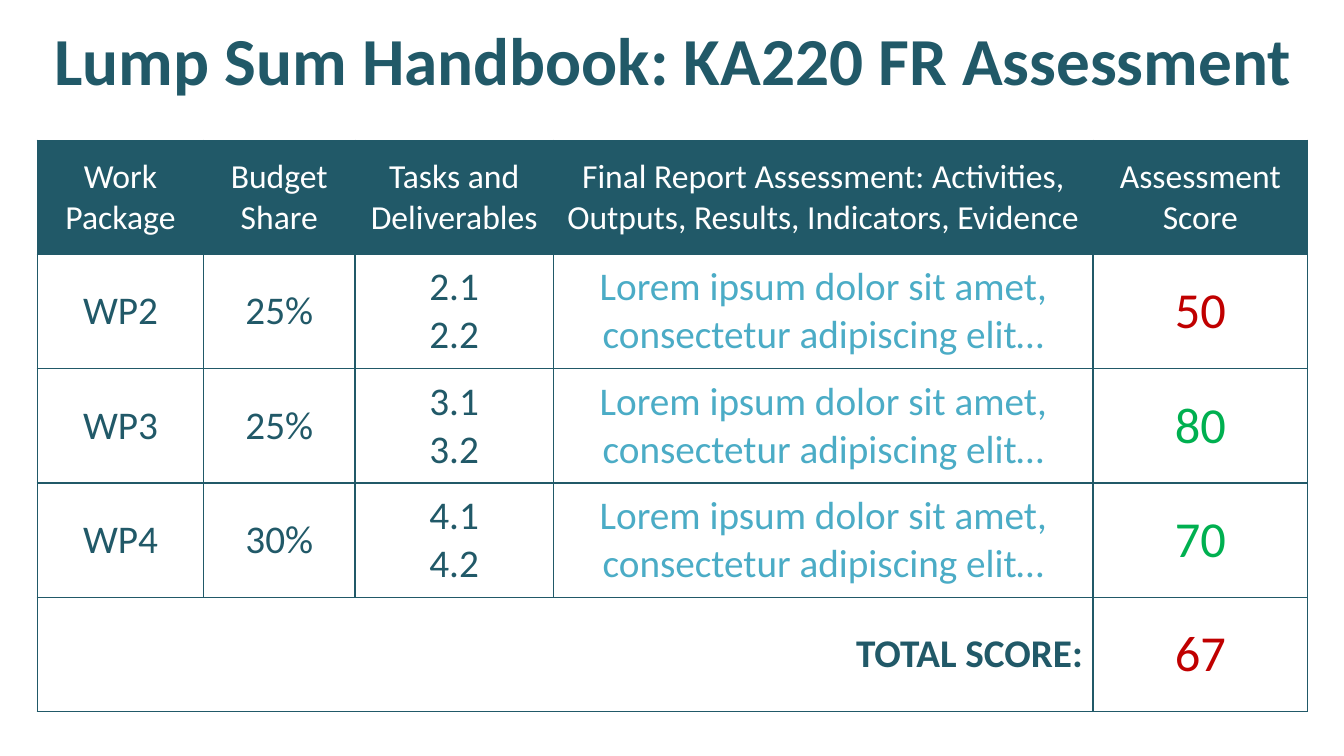
from lxml.etree import SubElement
from pptx import Presentation
from pptx.dml.color import RGBColor
from pptx.enum.text import MSO_ANCHOR as Anchor, MSO_AUTO_SIZE as AutoSize, PP_ALIGN as Align
from pptx.oxml.ns import qn
from pptx.util import Inches, Pt

FONT = "Calibri"
TEAL, AQUA, WHITE = "215968", "4BACC6", "FFFFFF"
RED, GREEN = "C00000", "00B050"
COLUMN_WIDTHS = [1.65, 1.5, 1.97, 5.35, 2.13]
HEADINGS = [
    "Work Package",
    "Budget Share",
    "Tasks and Deliverables",
    "Final Report Assessment: Activities, Outputs, Results, Indicators, Evidence",
    "Assessment Score",
]
FINDINGS = "Lorem ipsum dolor sit amet, consectetur adipiscing elit…"
WORK_PACKAGES = [
    ("WP2", "25%", "2.1\n2.2", FINDINGS, "50"),
    ("WP3", "25%", "3.1\n3.2", FINDINGS, "80"),
    ("WP4", "30%", "4.1\n4.2", FINDINGS, "70"),
]
TOTAL_SCORE = "67"
PASS_SCORE = 70


def color(value):
    """Turn a hex string into a colour."""
    return RGBColor.from_string(value)


def style_text(frame, text, size, hue, bold=False, align=Align.CENTER):
    """Write text into a frame and format its paragraphs."""
    frame.text = text
    for paragraph in frame.paragraphs:
        paragraph.alignment = align
        paragraph.font.name = FONT
        paragraph.font.size = Pt(size)
        paragraph.font.bold = bold
        paragraph.font.color.rgb = color(hue)


def draw_borders(cell):
    """Give a cell thin teal lines on all sides."""
    properties = cell._tc.get_or_add_tcPr()
    for position, side in enumerate(("lnL", "lnR", "lnT", "lnB")):
        line = SubElement(properties, qn(f"a:{side}"), w=str(Pt(1)))
        fill = SubElement(line, qn("a:solidFill"))
        SubElement(fill, qn("a:srgbClr"), val=TEAL)
        properties.insert(position, line)


def fill_score(cell, score):
    """Write a score, green when it passes and red when it does not."""
    style_text(cell.text_frame, score, 36, GREEN if int(score) >= PASS_SCORE else RED)


def add_title(slide, left, top, width, height):
    """Place the slide title in the given box."""
    title = slide.shapes.title
    title.left, title.top = Inches(left), Inches(top)
    title.width, title.height = Inches(width), Inches(height)
    frame = title.text_frame
    frame.auto_size = AutoSize.NONE
    frame.word_wrap = True
    frame.vertical_anchor = Anchor.TOP
    style_text(frame, "Lump Sum Handbook: KA220 FR Assessment", 48, TEAL, bold=True)
    frame.paragraphs[0].line_spacing = 0.8


def add_assessment_table(slide, left, top, width, height):
    """Place the assessment table in the given box."""
    row_count = len(WORK_PACKAGES) + 2
    table = slide.shapes.add_table(
        row_count, len(HEADINGS), Inches(left), Inches(top), Inches(width), Inches(height)
    ).table
    table.horz_banding = False
    for column, share in zip(table.columns, COLUMN_WIDTHS):
        column.width = Inches(width * share / sum(COLUMN_WIDTHS))
    for cell in table.iter_cells():
        cell.vertical_anchor = Anchor.MIDDLE
        cell.fill.background()
        draw_borders(cell)

    for column, heading in enumerate(HEADINGS):
        cell = table.cell(0, column)
        cell.fill.solid()
        cell.fill.fore_color.rgb = color(TEAL)
        style_text(cell.text_frame, heading, 24, WHITE)

    for row, (*details, score) in enumerate(WORK_PACKAGES, start=1):
        for column, detail in enumerate(details):
            hue = AQUA if detail == FINDINGS else TEAL
            style_text(table.cell(row, column).text_frame, detail, 28, hue)
        fill_score(table.cell(row, len(details)), score)

    last_row, last_column = row_count - 1, len(HEADINGS) - 1
    total = table.cell(last_row, 0)
    total.merge(table.cell(last_row, last_column - 1))
    style_text(total.text_frame, "TOTAL SCORE:", 28, TEAL, bold=True, align=Align.RIGHT)
    fill_score(table.cell(last_row, last_column), TOTAL_SCORE)


def main():
    """Build and save the presentation."""
    presentation = Presentation()
    presentation.slide_width, presentation.slide_height = Inches(13.33), Inches(7.5)
    slide = presentation.slides.add_slide(presentation.slide_layouts.get_by_name("Title Only"))
    add_title(slide, 0.03, 0.29, 13.3, 0.76)
    add_assessment_table(slide, 0.37, 1.39, 12.6, 5.67)
    presentation.save("out.pptx")


if __name__ == "__main__":
    main()
